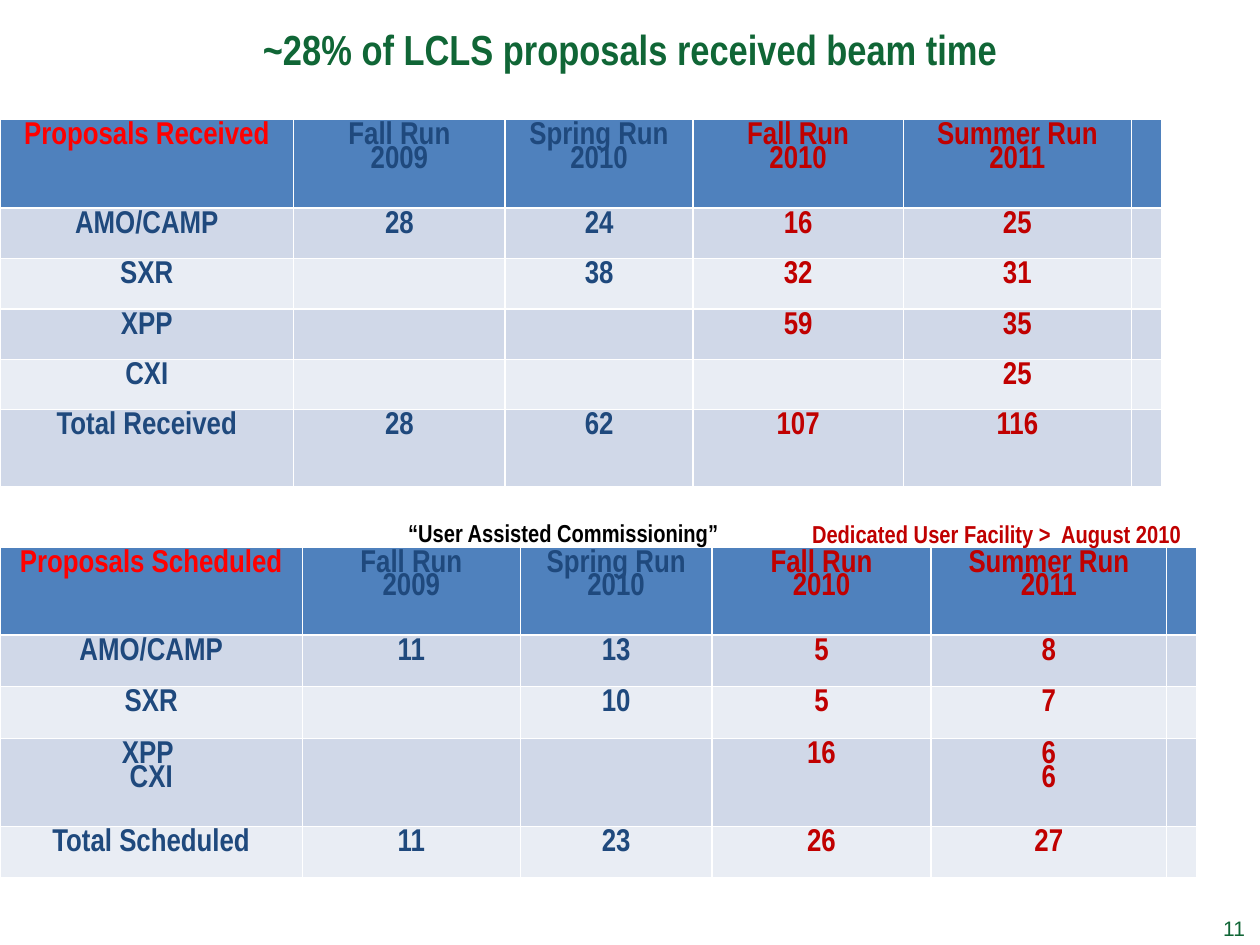
from lxml import etree
from pptx import Presentation
from pptx.dml.color import RGBColor
from pptx.enum import text
from pptx.oxml.ns import qn
from pptx.util import Inches, Pt

GREEN = RGBColor(0x10, 0x66, 0x36)
RED = RGBColor(0xFF, 0x00, 0x00)
DARK_RED = RGBColor(0xC0, 0x00, 0x00)
NAVY = RGBColor(0x1F, 0x49, 0x7D)
BLACK = RGBColor(0x00, 0x00, 0x00)
HEADER_FILL = RGBColor(0x4F, 0x81, 0xBD)
BAND_FILLS = (RGBColor(0xE9, 0xED, 0xF4), RGBColor(0xD0, 0xD8, 0xE8))

RECEIVED = [
    ["Proposals Received", "Fall Run\n2009", "Spring Run\n2010",
     "Fall Run\n2010", "Summer Run\n2011", ""],
    ["AMO/CAMP", "28", "24", "16", "25", ""],
    ["SXR", "", "38", "32", "31", ""],
    ["XPP", "", "", "59", "35", ""],
    ["CXI", "", "", "", "25", ""],
    ["Total Received", "28", "62", "107", "116", ""],
]
SCHEDULED = [
    ["Proposals Scheduled", "Fall Run\n2009", "Spring Run 2010",
     "Fall Run\n2010", "Summer Run\n2011", ""],
    ["AMO/CAMP", "11", "13", "5", "8", ""],
    ["SXR", "", "10", "5", "7", ""],
    ["XPP \nCXI", "", "", "16", "6\n6", ""],
    ["Total Scheduled", "11", "23", "26", "27", ""],
]


def style_font(p, size, color, bold=True, name="Arial Narrow"):
    p.font.name, p.font.size, p.font.bold = name, Pt(size), bold
    p.font.color.rgb = color


def add_label(s, label, box, size, color, align=text.PP_ALIGN.LEFT,
              anchor=text.MSO_ANCHOR.TOP, wrap=True, **font):
    tf = s.shapes.add_textbox(*map(Inches, box)).text_frame
    tf.word_wrap = wrap
    tf.vertical_anchor = anchor
    p = tf.paragraphs[0]
    p.text, p.alignment = label, align
    style_font(p, size, color, **font)


def add_borders(cell):
    tc_pr = cell._tc.get_or_add_tcPr()
    for i, side in enumerate(("a:lnL", "a:lnR", "a:lnT", "a:lnB")):
        ln = etree.Element(qn(side), w=str(Pt(1)))
        fill = etree.SubElement(ln, qn("a:solidFill"))
        etree.SubElement(fill, qn("a:srgbClr"), val="FFFFFF")
        tc_pr.insert(i, ln)


def cell_color(row, col):
    if col >= 3:
        return DARK_RED
    return RED if row == col == 0 else NAVY


def add_proposal_table(s, rows, top, widths, heights):
    table = s.shapes.add_table(
        len(rows), len(widths), 0, Inches(top),
        Inches(sum(widths)), Inches(sum(heights))).table
    for column, width in zip(table.columns, widths):
        column.width = Inches(width)
    for i, (values, height) in enumerate(zip(rows, heights)):
        table.rows[i].height = Inches(height)
        for j, value in enumerate(values):
            cell = table.cell(i, j)
            cell.text = value
            cell.fill.solid()
            cell.fill.fore_color.rgb = BAND_FILLS[i % 2] if i else HEADER_FILL
            add_borders(cell)
            for p in cell.text_frame.paragraphs:
                p.alignment = text.PP_ALIGN.CENTER
                p.line_spacing = 0.8
                style_font(p, 18, cell_color(i, j))


def main():
    prs = Presentation()
    prs.slide_width, prs.slide_height = Inches(10), Inches(7.5)
    s = prs.slides.add_slide(prs.slide_layouts[6])
    center = text.PP_ALIGN.CENTER

    # Title
    add_label(s, "~28% of LCLS proposals received beam time",
              (0, -0.24, 10, 1.25), 24, GREEN, center, text.MSO_ANCHOR.MIDDLE)

    # Proposal tables
    add_proposal_table(s, RECEIVED, 0.95, (2.33, 1.68, 1.49, 1.67, 1.81, 0.22),
                       (0.7, 0.4, 0.4, 0.4, 0.4, 0.61))
    add_proposal_table(s, SCHEDULED, 4.34, (2.4, 1.73, 1.52, 1.74, 1.87, 0.23),
                       (0.7, 0.41, 0.41, 0.7, 0.41))

    # Facility phases above the second table
    add_label(s, "“User Assisted Commissioning”", (3.14, 4.06, 2.78, 0.34),
              14, BLACK, wrap=False)
    add_label(s, "Dedicated User Facility >  August 2010",
              (5.82, 4.07, 4.18, 0.34), 14, DARK_RED, center)

    # Page number
    add_label(s, "11", (9.61, 7.22, 0.42, 0.37), 12, GREEN,
              bold=False, name="Arial")

    prs.save("out.pptx")


if __name__ == "__main__":
    main()
